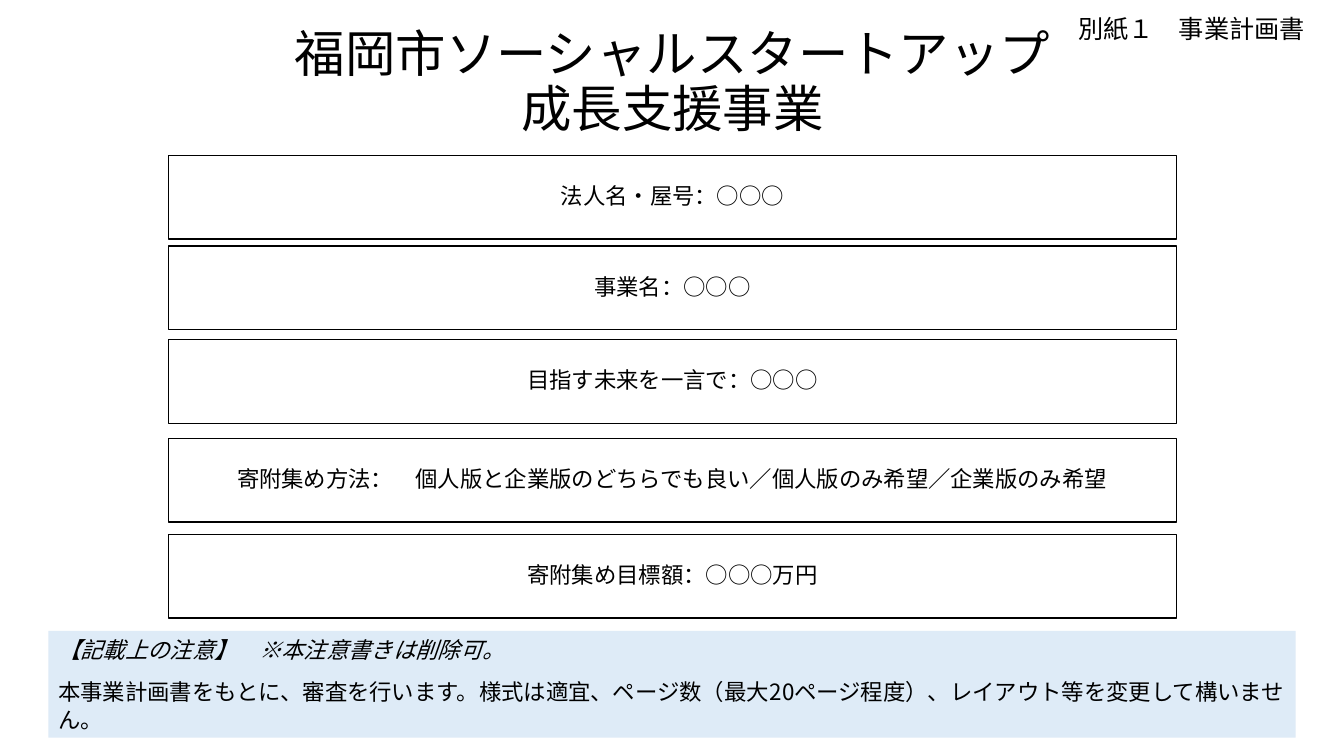
import pptx
import pptx.dml.color
import pptx.enum.shapes
import pptx.enum.text
import pptx.oxml.ns
import pptx.util
from lxml import etree

Inches = pptx.util.Inches
Pt = pptx.util.Pt
ALIGN = pptx.enum.text.PP_ALIGN
ANCHOR = pptx.enum.text.MSO_ANCHOR

COLORS = {"text": "000000", "box": "FFFFFF", "border": "000000", "note": "DEEBF7"}
FONT = "Noto Sans CJK JP"


def color(name):
    return pptx.dml.color.RGBColor.from_string(COLORS[name])


class PlanSlide:
    """Holds the style and the current slide."""

    def __init__(self, presentation):
        self.slide = presentation.slides.add_slide(presentation.slide_layouts[6])

    def set_lines(self, shape, lines, size, align, anchor, spacing=None, before=0):
        text_frame = shape.text_frame
        text_frame.word_wrap = True
        text_frame.vertical_anchor = anchor
        for index, line in enumerate(lines):
            paragraph = text_frame.add_paragraph() if index else text_frame.paragraphs[0]
            paragraph.text = line
            paragraph.alignment = align
            paragraph.space_before = Pt(before)
            if spacing:
                paragraph.line_spacing = spacing
            for run in paragraph.runs:
                run.font.size = Pt(size)
                run.font.color.rgb = color("text")
                run.font.name = FONT
                properties = run._r.get_or_add_rPr()
                east_asian = etree.SubElement(properties, pptx.oxml.ns.qn("a:ea"))
                east_asian.set("typeface", FONT)

    def add_text(self, line, left, top, width, height, size, align, anchor, spacing=None):
        shape = self.slide.shapes.add_textbox(
            Inches(left), Inches(top), Inches(width), Inches(height))
        self.set_lines(shape, [line], size, align, anchor, spacing)

    def add_rectangle(self, left, top, width, height, fill, border=None):
        shape = self.slide.shapes.add_shape(
            pptx.enum.shapes.MSO_SHAPE.RECTANGLE,
            Inches(left), Inches(top), Inches(width), Inches(height))
        shape.shadow.inherit = False
        shape.fill.solid()
        shape.fill.fore_color.rgb = color(fill)
        if border:
            shape.line.color.rgb = color(border)
            shape.line.width = Pt(1)
        else:
            shape.line.fill.background()
        return shape

    def add_entry(self, line, top):
        shape = self.add_rectangle(1.67, top, 10, 0.83, "box", "border")
        self.set_lines(shape, [line], 16, ALIGN.CENTER, ANCHOR.MIDDLE, 0.9, 10)

    def add_note(self, heading, body):
        shape = self.add_rectangle(0.48, 6.26, 12.37, 1.06, "note")
        self.set_lines(shape, [heading, body], 16, ALIGN.LEFT, ANCHOR.MIDDLE, Pt(20), 10)
        shape.text_frame.paragraphs[0].runs[0].font.italic = True


def main():
    presentation = pptx.Presentation()
    presentation.slide_width = Inches(13.33)
    presentation.slide_height = Inches(7.5)
    plan = PlanSlide(presentation)

    # Title and document label
    plan.add_text("福岡市ソーシャルスタートアップ\n成長支援事業",
                  1.67, 0.2, 10, 1.22, 36, ALIGN.CENTER, ANCHOR.BOTTOM, 0.9)
    plan.add_text("別紙１　事業計画書", 8.35, 0.08, 4.69, 0.4, 18, ALIGN.RIGHT, ANCHOR.TOP)

    # Boxes to fill in
    entries = [
        ("法人名・屋号：○○○", 1.54),
        ("事業名：○○○", 2.44),
        ("目指す未来を一言で：○○○", 3.37),
        ("寄附集め方法：　個人版と企業版のどちらでも良い／個人版のみ希望／企業版のみ希望", 4.35),
        ("寄附集め目標額：○○○万円", 5.3),
    ]
    for line, top in entries:
        plan.add_entry(line, top)

    # Instructions
    plan.add_note(
        "【記載上の注意】　※本注意書きは削除可。",
        "本事業計画書をもとに、審査を行います。様式は適宜、ページ数（最大20ページ程度）、"
        "レイアウト等を変更して構いません。")

    presentation.save("out.pptx")


if __name__ == "__main__":
    main()
